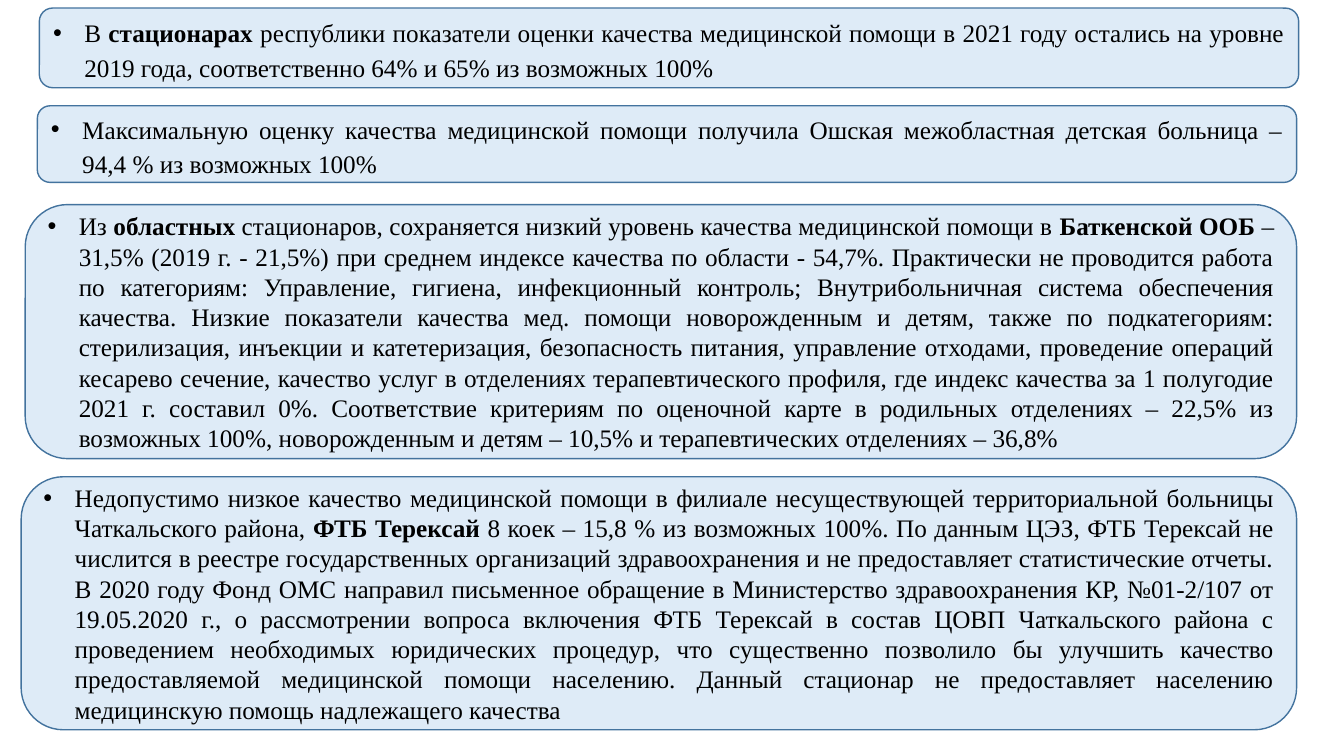
from dataclasses import dataclass

import pptx
import pptx.dml.color
import pptx.enum.shapes
import pptx.enum.text
import pptx.oxml.ns
import pptx.slide
import pptx.util
from lxml import etree

Inches = pptx.util.Inches
Pt = pptx.util.Pt

PALE_BLUE = pptx.dml.color.RGBColor(0xDE, 0xEB, 0xF7)
EDGE_BLUE = pptx.dml.color.RGBColor(0x43, 0x73, 0x9E)
BLACK = pptx.dml.color.RGBColor(0, 0, 0)
BULLET_INDENT = Inches(0.31)
BOLD_MARK = "**"


@dataclass(frozen=True)
class Finding:
    left: float
    top: float
    width: float
    height: float
    text: str
    line_spacing: float = 1.0


FINDINGS = [
    Finding(
        0.39, 0.08, 12.49, 0.79,
        "В **стационарах** республики показатели оценки качества медицинской "
        "помощи в 2021 году остались на уровне 2019 года, соответственно 64% "
        "и 65% из возможных 100%",
        1.14,
    ),
    Finding(
        0.37, 1.05, 12.49, 0.76,
        "Максимальную оценку качества медицинской помощи получила Ошская "
        "межобластная детская больница – 94,4 % из возможных 100%",
        1.15,
    ),
    Finding(
        0.25, 2.03, 12.61, 2.52,
        "Из **областных** стационаров, сохраняется низкий уровень качества "
        "медицинской помощи в **Баткенской ООБ** – 31,5% (2019 г. - 21,5%) "
        "при среднем индексе качества по области - 54,7%. Практически не "
        "проводится работа по категориям: Управление, гигиена, инфекционный "
        "контроль; Внутрибольничная система обеспечения качества. Низкие "
        "показатели качества мед. помощи новорожденным и детям, также по "
        "подкатегориям: стерилизация, инъекции и катетеризация, безопасность "
        "питания, управление отходами, проведение операций кесарево сечение, "
        "качество услуг в отделениях терапевтического профиля, где индекс "
        "качества за 1 полугодие 2021 г. составил 0%. Соответствие критериям "
        "по оценочной карте в родильных отделениях – 22,5% из возможных 100%, "
        "новорожденным и детям – 10,5% и терапевтических отделениях – 36,8%",
    ),
    Finding(
        0.21, 4.73, 12.65, 2.51,
        "Недопустимо низкое качество медицинской помощи в филиале "
        "несуществующей территориальной больницы Чаткальского района, "
        "**ФТБ Терексай** 8 коек – 15,8 % из возможных 100%. По данным ЦЭЗ, "
        "ФТБ Терексай не числится в реестре государственных организаций "
        "здравоохранения и не предоставляет статистические отчеты. В 2020 "
        "году Фонд ОМС направил письменное обращение в Министерство "
        "здравоохранения КР, №01-2/107 от 19.05.2020 г., о рассмотрении "
        "вопроса включения ФТБ Терексай в состав ЦОВП Чаткальского района с "
        "проведением необходимых юридических процедур, что существенно "
        "позволило бы улучшить качество предоставляемой медицинской помощи "
        "населению. Данный стационар не предоставляет населению медицинскую "
        "помощь надлежащего качества",
    ),
]


def draw_finding(slide: pptx.slide.Slide, finding: Finding) -> None:
    """Draw a rounded panel with one bullet; marked stretches become bold."""
    panel = slide.shapes.add_shape(
        pptx.enum.shapes.MSO_SHAPE.ROUNDED_RECTANGLE,
        Inches(finding.left), Inches(finding.top),
        Inches(finding.width), Inches(finding.height),
    )
    panel.shadow.inherit = False
    panel.fill.solid()
    panel.fill.fore_color.rgb = PALE_BLUE
    panel.line.color.rgb = EDGE_BLUE
    panel.line.width = Pt(1)

    frame = panel.text_frame
    frame.word_wrap = True
    frame.vertical_anchor = pptx.enum.text.MSO_ANCHOR.MIDDLE
    paragraph = frame.paragraphs[0]
    paragraph.alignment = pptx.enum.text.PP_ALIGN.JUSTIFY
    paragraph.line_spacing = finding.line_spacing

    properties = paragraph._p.get_or_add_pPr()
    properties.set("marL", str(BULLET_INDENT))
    properties.set("indent", str(-BULLET_INDENT))
    qn = pptx.oxml.ns.qn
    etree.SubElement(properties, qn("a:buFont"), typeface="Arial")
    etree.SubElement(properties, qn("a:buChar"), char="•")

    paragraph.font.name = "Times New Roman"
    paragraph.font.size = Pt(18)
    paragraph.font.color.rgb = BLACK
    for position, words in enumerate(finding.text.split(BOLD_MARK)):
        run = paragraph.add_run()
        run.text = words
        if position % 2:
            run.font.bold = True


def main() -> None:
    presentation = pptx.Presentation()
    presentation.slide_width = Inches(13.33)
    presentation.slide_height = Inches(7.5)
    slide = presentation.slides.add_slide(presentation.slide_layouts[6])
    for finding in FINDINGS:
        draw_finding(slide, finding)
    presentation.save("out.pptx")


if __name__ == "__main__":
    main()
